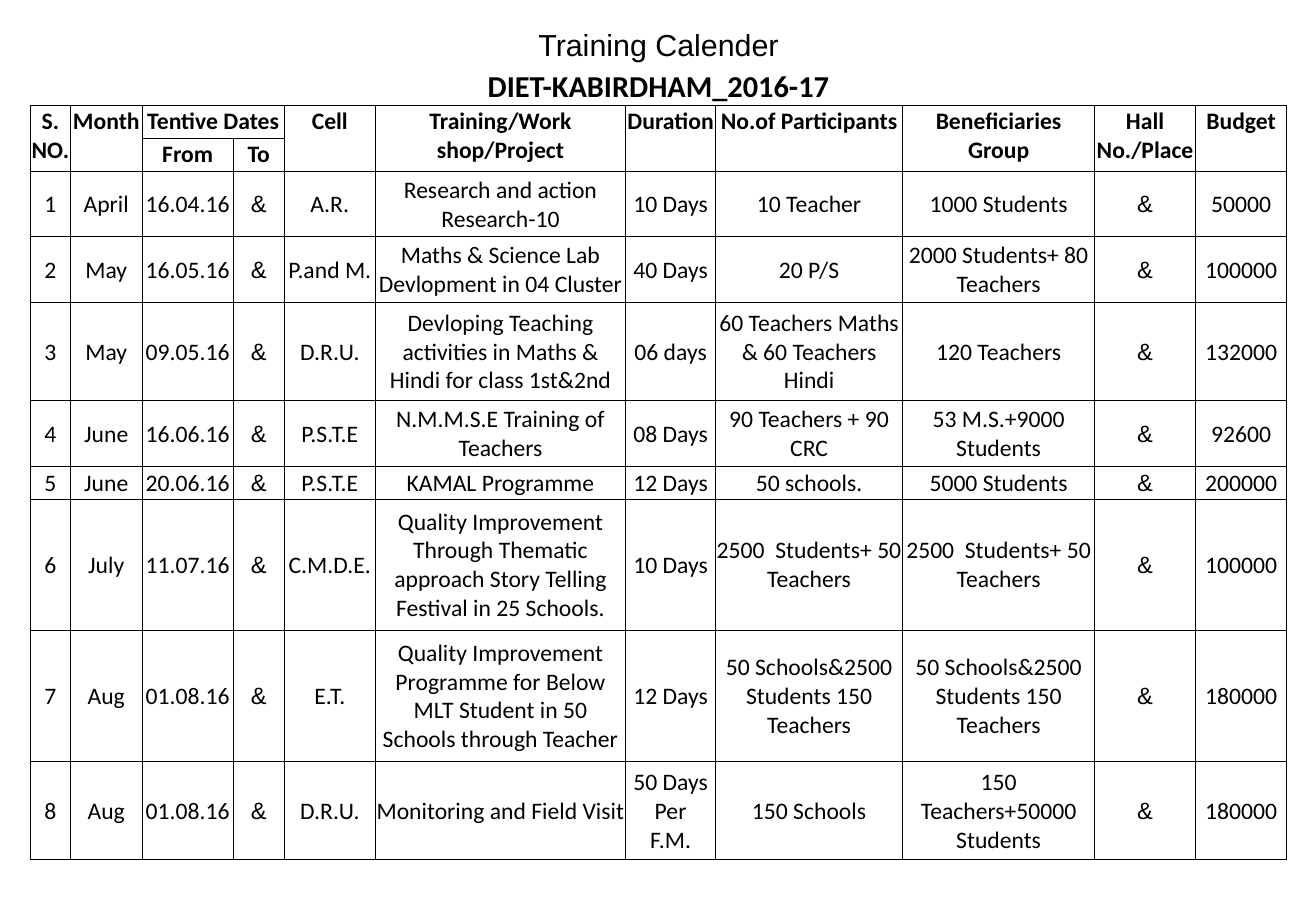
from dataclasses import dataclass

from lxml.etree import SubElement
from pptx import Presentation
from pptx.dml.color import RGBColor
from pptx.enum.text import MSO_ANCHOR, PP_ALIGN
from pptx.oxml.ns import qn
from pptx.table import Table, _Cell
from pptx.util import Inches, Pt

COLORS = {"ink": "000000"}
TO_BE_SET = "&"
COL_WIDTHS = [0.33, 0.59, 0.75, 0.42, 0.75, 2.06, 0.74, 1.54, 1.58, 0.83, 0.75]
LINE_HEIGHT = 0.27
TITLE_HEIGHT = 0.35
TITLE_ROWS = 2
HEADER_ROWS = 2
FROM_COL, TO_COL = 2, 3
HEADERS = ["S. NO.", "Month", "Tentive Dates", "", "Cell",
           "Training/Work shop/Project", "Duration", "No.of Participants",
           "Beneficiaries Group", "Hall No./Place", "Budget"]


@dataclass
class Training:
    month: str
    start: str
    cell: str
    project: str
    duration: str
    participants: str
    beneficiaries: str
    budget: str
    lines: int

    def texts(self, number: int) -> list[str]:
        return [str(number), self.month, self.start, TO_BE_SET, self.cell,
                self.project, self.duration, self.participants,
                self.beneficiaries, TO_BE_SET, self.budget]


TRAININGS = [
    Training("April", "16.04.16", "A.R.", "Research and action Research-10",
             "10 Days", "10 Teacher", "1000 Students", "50000", 2),
    Training("May", "16.05.16", "P.and M.",
             "Maths & Science Lab Devlopment in 04 Cluster",
             "40 Days", "20 P/S", "2000 Students+ 80 Teachers", "100000", 2),
    Training("May", "09.05.16", "D.R.U.",
             "Devloping Teaching activities in Maths & Hindi for class 1st&2nd",
             "06 days", "60 Teachers Maths & 60 Teachers Hindi",
             "120 Teachers", "132000", 3),
    Training("June", "16.06.16", "P.S.T.E", "N.M.M.S.E Training of Teachers",
             "08 Days", "90 Teachers + 90 CRC", "53 M.S.+9000 Students",
             "92600", 2),
    Training("June", "20.06.16", "P.S.T.E", "KAMAL Programme",
             "12 Days", "50 schools.", "5000 Students", "200000", 1),
    Training("July", "11.07.16", "C.M.D.E.",
             "Quality Improvement Through Thematic approach Story Telling "
             "Festival in 25 Schools.",
             "10 Days", "2500  Students+ 50 Teachers",
             "2500  Students+ 50 Teachers", "100000", 4),
    Training("Aug", "01.08.16", "E.T.",
             "Quality Improvement Programme for Below MLT Student in 50 "
             "Schools through Teacher",
             "12 Days", "50 Schools&2500 Students 150 Teachers",
             "50 Schools&2500 Students 150 Teachers", "180000", 4),
    Training("Aug", "01.08.16", "D.R.U.", "Monitoring and Field Visit",
             "50 Days\nPer\nF.M.", "150 Schools",
             "150 Teachers+50000 Students", "180000", 3),
]


def write(cell: _Cell, text: str, *, size: int = 14, font: str = "Calibri",
          bold: bool = False, anchor: MSO_ANCHOR = MSO_ANCHOR.TOP) -> None:
    cell.vertical_anchor = anchor
    tf = cell.text_frame
    tf.text = text
    for p in tf.paragraphs:
        p.alignment = PP_ALIGN.CENTER
        for r in p.runs:
            r.font.size = Pt(size)
            r.font.name = font
            r.font.bold = bold
            r.font.color.rgb = RGBColor.from_string(COLORS["ink"])


def set_borders(cell: _Cell, visible: str) -> None:
    """Draw the sides named in visible (from "LRTB") and hide the others."""
    tc_pr = cell._tc.get_or_add_tcPr()
    for side in "LRTB":
        ln = SubElement(tc_pr, qn(f"a:ln{side}"), w=str(Pt(0.5)))
        if side in visible:
            fill = SubElement(ln, qn("a:solidFill"))
            SubElement(fill, qn("a:srgbClr"), val=COLORS["ink"])
        else:
            SubElement(ln, qn("a:noFill"))


def format_grid(table: Table) -> None:
    """Set sizes, margins, borders and fills of every cell."""
    heights = [TITLE_HEIGHT] * TITLE_ROWS + [LINE_HEIGHT] * HEADER_ROWS
    heights += [LINE_HEIGHT * training.lines for training in TRAININGS]
    for col, width in zip(table.columns, COL_WIDTHS):
        col.width = Inches(width)
    for i, (row, height) in enumerate(zip(table.rows, heights)):
        row.height = Inches(height)
        visible = "LRTB" if i >= TITLE_ROWS else "B" if i == TITLE_ROWS - 1 else ""
        for cell in row.cells:
            cell.margin_left = cell.margin_right = cell.margin_bottom = 0
            cell.margin_top = Inches(0.01)
            set_borders(cell, visible)
            cell.fill.background()


def fill_titles(table: Table) -> None:
    for row in range(TITLE_ROWS):
        table.cell(row, 0).merge(table.cell(row, len(COL_WIDTHS) - 1))
    write(table.cell(0, 0), "Training Calender", size=18, font="Arial",
          anchor=MSO_ANCHOR.BOTTOM)
    write(table.cell(1, 0), "DIET-KABIRDHAM_2016-17", size=18, bold=True,
          anchor=MSO_ANCHOR.BOTTOM)


def fill_headers(table: Table) -> None:
    top, bottom = TITLE_ROWS, TITLE_ROWS + 1
    table.cell(top, FROM_COL).merge(table.cell(top, TO_COL))
    for col, text in enumerate(HEADERS):
        if col not in (FROM_COL, TO_COL):
            table.cell(top, col).merge(table.cell(bottom, col))
        if text:
            write(table.cell(top, col), text, bold=True)
    write(table.cell(bottom, FROM_COL), "From", bold=True)
    write(table.cell(bottom, TO_COL), "To", bold=True)


def fill_trainings(table: Table) -> None:
    for number, training in enumerate(TRAININGS, 1):
        row = TITLE_ROWS + HEADER_ROWS + number - 1
        for col, text in enumerate(training.texts(number)):
            font = "Arial" if text == TO_BE_SET else "Calibri"
            write(table.cell(row, col), text, font=font, anchor=MSO_ANCHOR.MIDDLE)


def main() -> None:
    prs = Presentation()
    prs.slide_width, prs.slide_height = Inches(10.83), Inches(7.5)
    s = prs.slides.add_slide(prs.slide_layouts[6])
    rows = TITLE_ROWS + HEADER_ROWS + len(TRAININGS)
    table = s.shapes.add_table(rows, len(COL_WIDTHS), Inches(0.25), Inches(0.17),
                               Inches(10.33), Inches(6.92)).table
    table.first_row = table.horz_banding = False
    format_grid(table)
    fill_titles(table)
    fill_headers(table)
    fill_trainings(table)
    prs.save("out.pptx")


if __name__ == "__main__":
    main()
